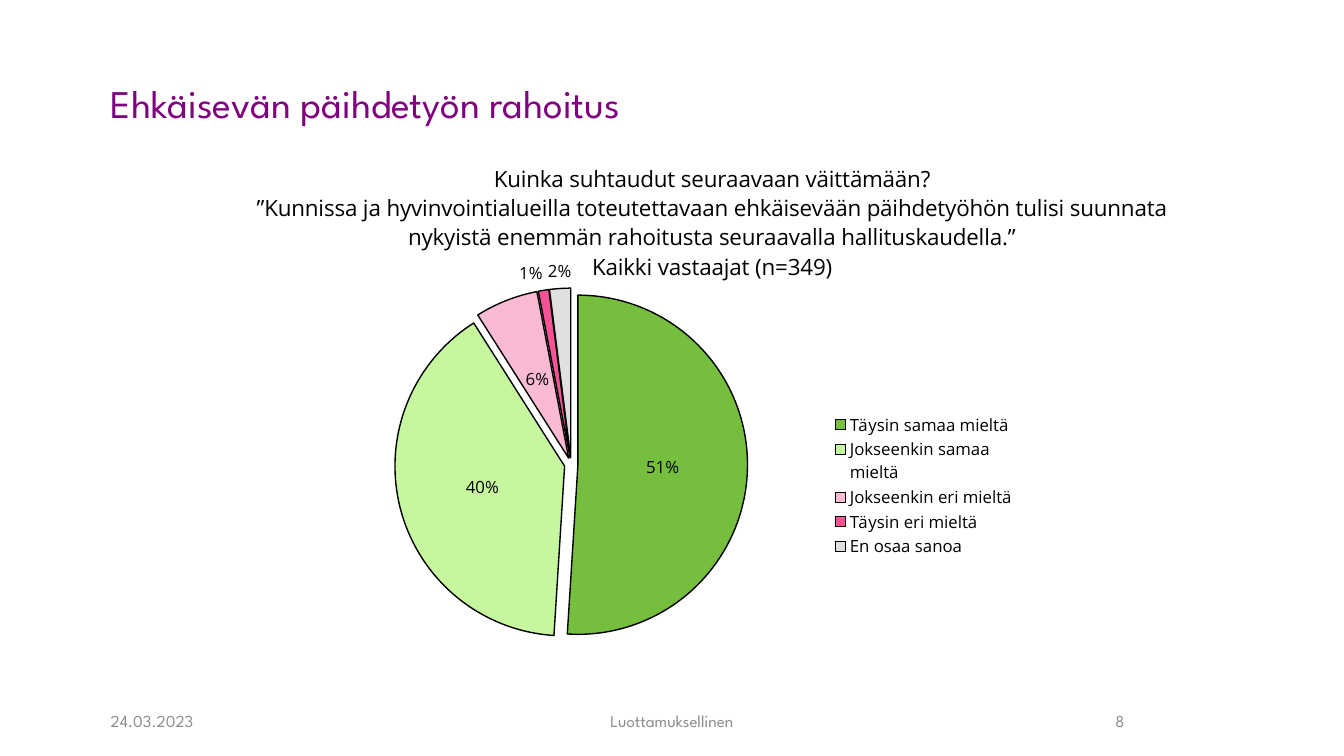
from lxml.etree import SubElement
from pptx import Presentation
from pptx.chart.data import CategoryChartData
from pptx.dml.color import RGBColor
from pptx.enum.chart import XL_CHART_TYPE, XL_LABEL_POSITION, XL_LEGEND_POSITION
from pptx.enum.text import MSO_ANCHOR, PP_ALIGN
from pptx.oxml import parse_xml
from pptx.oxml.ns import nsdecls, qn
from pptx.util import Pt

COLORS = {"title": "800080", "footer": "8C8C8C", "text": "000000", "outline": "000000"}
HEADING_FONT = "League Spartan"
CHART_FONT = "Open Sans"

QUESTION = [
    "Kuinka suhtaudut seuraavaan väittämään?",
    "”Kunnissa ja hyvinvointialueilla toteutettavaan ehkäisevään päihdetyöhön tulisi suunnata "
    "nykyistä enemmän rahoitusta seuraavalla hallituskaudella.”",
    "Kaikki vastaajat (n=349)",
]
ANSWERS = [
    ("Täysin samaa mieltä", 0.51, "54AE0E", XL_LABEL_POSITION.CENTER),
    ("Jokseenkin samaa mieltä", 0.40, "B8F588", XL_LABEL_POSITION.CENTER),
    ("Jokseenkin eri mieltä", 0.06, "FAA9CA", XL_LABEL_POSITION.CENTER),
    ("Täysin eri mieltä", 0.01, "F3297B", XL_LABEL_POSITION.OUTSIDE_END),
    ("En osaa sanoa", 0.02, "D9D9D9", XL_LABEL_POSITION.OUTSIDE_END),
]


def style_font(font, name, size, color):
    font.name = name
    font.size = Pt(size)
    font.bold = False
    font.color.rgb = RGBColor.from_string(COLORS[color])


def add_text(slide, text, box, size, color, anchor=MSO_ANCHOR.MIDDLE, align=PP_ALIGN.LEFT):
    frame = slide.shapes.add_textbox(*map(Pt, box)).text_frame
    frame.word_wrap = True
    frame.vertical_anchor = anchor
    paragraph = frame.paragraphs[0]
    paragraph.alignment = align
    run = paragraph.add_run()
    run.text = text
    style_font(run.font, HEADING_FONT, size, color)
    return paragraph


def place(element, x, y, width=None, height=None, inner=False):
    for old_layout in element.findall(qn("c:layout")):
        element.remove(old_layout)
    target = '<c:layoutTarget val="inner"/>' if inner else ""
    sizes = f'<c:w val="{width}"/><c:h val="{height}"/>' if width else ""
    layout = parse_xml(
        f'<c:layout {nsdecls("c")}><c:manualLayout>{target}<c:xMode val="edge"/>'
        f'<c:yMode val="edge"/><c:x val="{x}"/><c:y val="{y}"/>{sizes}'
        "</c:manualLayout></c:layout>"
    )
    previous = element.find(qn("c:tx"))
    if previous is None:
        previous = element.find(qn("c:legendPos"))
    if previous is None:
        element.insert(0, layout)
    else:
        previous.addnext(layout)


def add_chart_title(chart):
    frame = chart.chart_title.text_frame
    for index, line in enumerate(QUESTION):
        paragraph = frame.add_paragraph() if index else frame.paragraphs[0]
        paragraph.alignment = PP_ALIGN.CENTER
        run = paragraph.add_run()
        run.text = line
        style_font(run.font, CHART_FONT, 16, "text")
    chart.chart_title.include_in_layout = False
    place(chart.chart_title._element, 0.13, 0.02)


def add_legend(chart):
    chart.has_legend = True
    chart.legend.position = XL_LEGEND_POSITION.RIGHT
    chart.legend.include_in_layout = False
    style_font(chart.legend.font, CHART_FONT, 12, "text")
    place(chart.legend._element, 0.62, 0.5, 0.16, 0.28)


def style_slices(series):
    series.format.line.width = Pt(1)
    properties = series._element.find(qn("c:spPr"))
    properties.addnext(parse_xml(f'<c:explosion {nsdecls("c")} val="4"/>'))
    for index, (_, _, color, position) in enumerate(ANSWERS):
        point = series.points[index]
        fill = point.format.fill
        fill.solid()
        fill.fore_color.rgb = RGBColor.from_string(color)
        color_element = point._element.findall(qn("c:dPt"))[index].find(".//" + qn("a:srgbClr")) \
            if hasattr(point, "_element") else \
            series._element.findall(qn("c:dPt"))[index].find(".//" + qn("a:srgbClr"))
        SubElement(color_element, qn("a:alpha"), val="80000")
        point.format.line.width = Pt(1)
        point.format.line.color.rgb = RGBColor.from_string(COLORS["outline"])
        style_font(point.data_label.font, CHART_FONT, 12, "text")
        point.data_label.position = position


def add_pie(slide):
    data = CategoryChartData(number_format="0%")
    data.categories = [answer for answer, *_ in ANSWERS]
    data.add_series("Vastaajat", [share for _, share, *_ in ANSWERS])
    box = map(Pt, (72, 106, 840, 376.5))
    chart = slide.shapes.add_chart(XL_CHART_TYPE.PIE, *box, data).chart
    style_font(chart.font, CHART_FONT, 10, "text")
    add_chart_title(chart)
    add_legend(chart)
    chart.plots[0].vary_by_categories = True
    style_slices(chart.plots[0].series[0])
    plot_area = chart._chartSpace.find(".//" + qn("c:plotArea"))
    place(plot_area, 0.25, 0.26, 0.3, 0.68, inner=True)


def main():
    presentation = Presentation()
    presentation.slide_width = Pt(960)
    presentation.slide_height = Pt(540)
    slide = presentation.slides.add_slide(presentation.slide_layouts[6])

    title = add_text(slide, "Ehkäisevän päihdetyön rahoitus", (72, 16.5, 840, 78), 28,
                     "title", anchor=MSO_ANCHOR.BOTTOM)
    title.line_spacing = 0.9
    add_pie(slide)
    add_text(slide, "24.03.2023", (72, 500.5, 200, 28.5), 12, "footer")
    for text, left, width in (("Luottamuksellinen", 328, 304), ("8", 688, 224)):
        add_text(slide, text, (left, 500.5, width, 28.5), 12, "footer", align=PP_ALIGN.CENTER)

    presentation.save("out.pptx")


if __name__ == "__main__":
    main()
